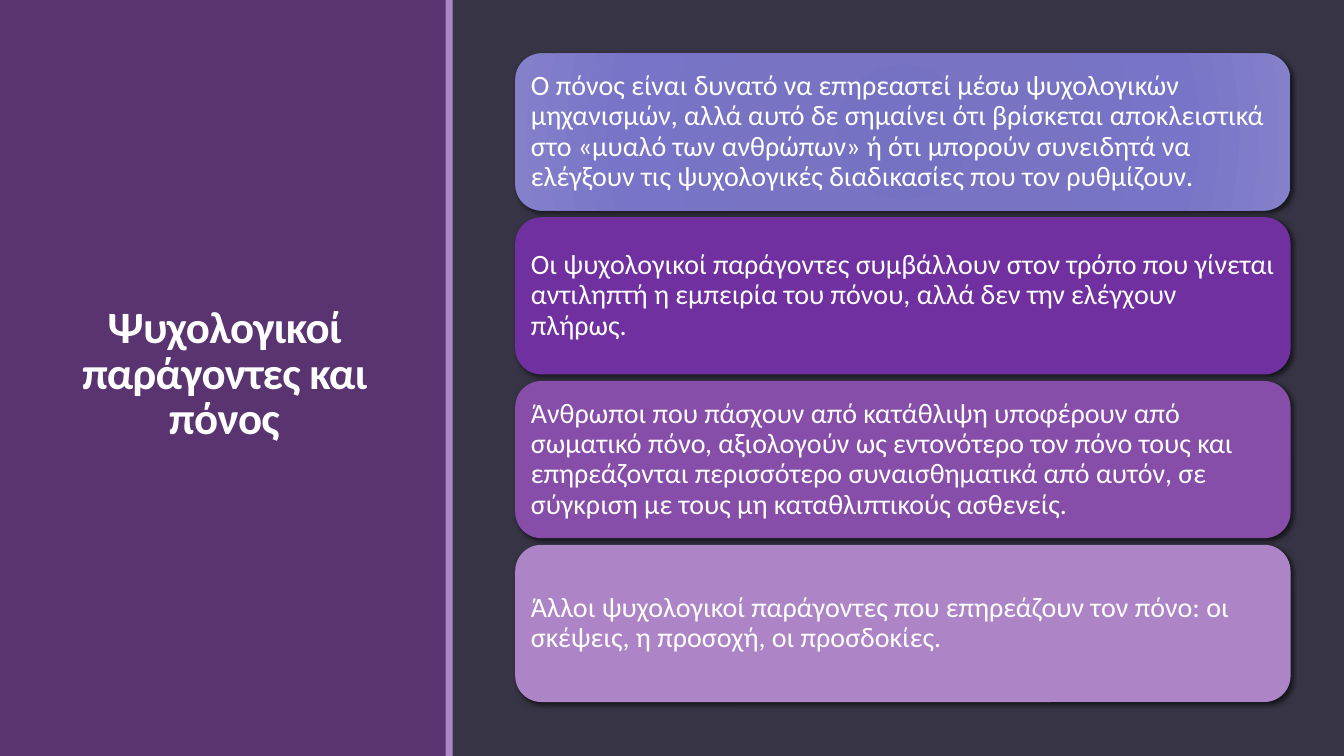
from lxml import etree
from pptx import Presentation
from pptx.dml.color import RGBColor
from pptx.enum import shapes, text
from pptx.oxml import ns
from pptx.util import Inches, Pt

TITLE = "Ψυχολογικοί παράγοντες και πόνος"
CARDS = [
    ("7874C3", "Ο πόνος είναι δυνατό να επηρεαστεί μέσω ψυχολογικών μηχανισμών, αλλά αυτό δε σημαίνει ότι βρίσκεται αποκλειστικά στο «μυαλό των ανθρώπων» ή ότι μπορούν συνειδητά να ελέγξουν τις ψυχολογικές διαδικασίες που τον ρυθμίζουν."),
    ("7030A0", "Οι ψυχολογικοί παράγοντες συμβάλλουν στον τρόπο που γίνεται αντιληπτή η εμπειρία του πόνου, αλλά δεν την ελέγχουν πλήρως."),
    ("874EA9", "Άνθρωποι που πάσχουν από κατάθλιψη υποφέρουν από σωματικό πόνο, αξιολογούν ως εντονότερο τον πόνο τους και επηρεάζονται περισσότερο συναισθηματικά από αυτόν, σε σύγκριση με τους μη καταθλιπτικούς ασθενείς."),
    ("AD84C6", "Άλλοι ψυχολογικοί παράγοντες που επηρεάζουν τον πόνο: οι σκέψεις, η προσοχή, οι προσδοκίες."),
]
GLOW = [(0, "7572C3"), (34, "7874C3"), (70, "7874C8"), (100, "8481CA")]
PANELS = [(0, 4.43, "5A3471"), (4.42, 0.07, "AD84C6")]
LEFT, TOP, WIDTH, HEIGHT, STEP = 5.11, 0.53, 7.69, 1.56, 1.625


def color(code):
    return RGBColor.from_string(code)


def node(parent, tag, **attrs):
    return etree.SubElement(parent, ns.qn(tag), **attrs)


def block(kind, x, y, w, h, code):
    shape = slide.shapes.add_shape(kind, Inches(x), Inches(y), Inches(w), Inches(h))
    shape.shadow.inherit = False
    shape.fill.solid()
    shape.fill.fore_color.rgb = color(code)
    shape.line.fill.background()
    return shape


def write(shape, words, size, align, space, inset):
    frame = shape.text_frame
    frame.text = words
    frame.word_wrap = True
    frame.vertical_anchor = text.MSO_ANCHOR.MIDDLE
    frame.margin_left = frame.margin_right = Inches(inset)
    frame.margin_top = frame.margin_bottom = Inches(inset)
    para = frame.paragraphs[0]
    para.alignment = align
    para.line_spacing = space
    run = para.runs[0]
    run.font.size = Pt(size)
    run.font.name = "Calibri"
    run.font.color.rgb = color("FFFFFF")
    return run


def shade(shape):
    effect = shape._element.spPr.find(ns.qn("a:effectLst"))
    shadow = node(effect, "a:outerShdw", blurRad=str(Pt(3)), dist=str(Pt(2)),
                  dir="2700000", algn="ctr", rotWithShape="0")
    black = node(shadow, "a:srgbClr", val="000000")
    node(black, "a:alpha", val="60000")


def glow(shape, stops):
    props = shape._element.spPr
    grad = etree.Element(ns.qn("a:gradFill"), rotWithShape="1")
    listing = node(grad, "a:gsLst")
    for pos, code in stops:
        stop = node(listing, "a:gs", pos=str(pos * 1000))
        node(stop, "a:srgbClr", val=code)
    ring = node(grad, "a:path", path="circle")
    node(ring, "a:fillToRect", l="50000", t="50000", r="50000", b="50000")
    props.replace(props.find(ns.qn("a:solidFill")), grad)


deck = Presentation()
deck.slide_width, deck.slide_height = Inches(13.33), Inches(7.5)
slide = deck.slides.add_slide(deck.slide_layouts[6])
slide.background.fill.solid()
slide.background.fill.fore_color.rgb = color("373545")

for x, w, code in PANELS:
    block(shapes.MSO_SHAPE.RECTANGLE, x, 0, w, 7.5, code)

title = slide.shapes.add_textbox(Inches(0.54), Inches(0.57), Inches(3.37), Inches(6.31))
run = write(title, TITLE, 32, text.PP_ALIGN.CENTER, 0.85, 0.1)
run.font.bold = True
run._r.get_or_add_rPr().set("spc", "-50")

for i, (code, words) in enumerate(CARDS):
    card = block(shapes.MSO_SHAPE.ROUNDED_RECTANGLE, LEFT, TOP + i * STEP, WIDTH, HEIGHT, code)
    write(card, words, 20, text.PP_ALIGN.LEFT, 0.9, 0.08)
    shade(card)
    if i == 0:
        glow(card, GLOW)

deck.save("out.pptx")
